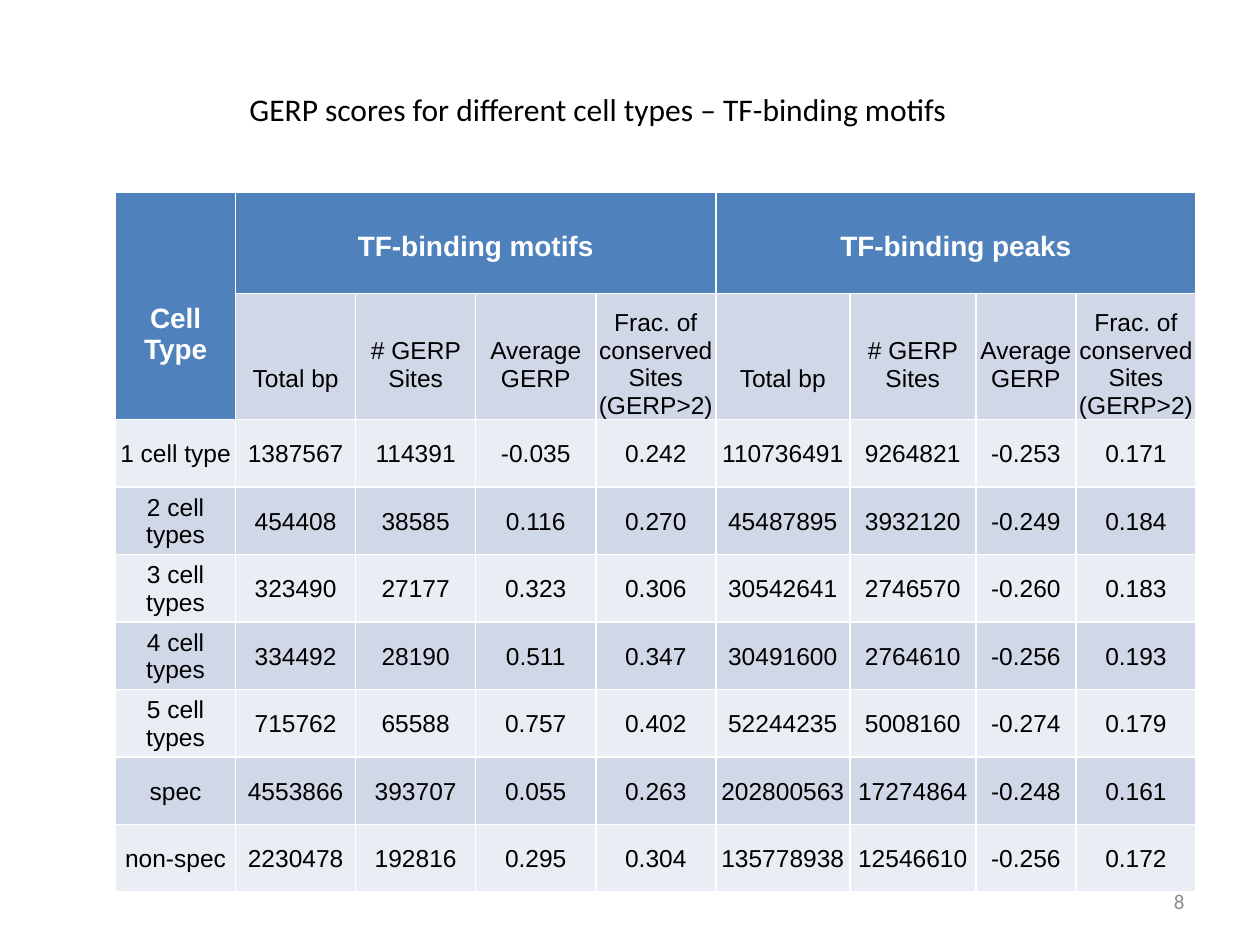
from lxml import etree
from pptx import Presentation
from pptx.dml.color import RGBColor
from pptx.enum.text import MSO_ANCHOR, PP_ALIGN
from pptx.oxml.ns import qn
from pptx.util import Cm, Pt

CENTER, LEFT, RIGHT = PP_ALIGN.CENTER, PP_ALIGN.LEFT, PP_ALIGN.RIGHT
MIDDLE, BOTTOM, TOP = MSO_ANCHOR.MIDDLE, MSO_ANCHOR.BOTTOM, MSO_ANCHOR.TOP

HEADER_FILL, DARK_BAND, LIGHT_BAND = "4F81BD", "D0D8E8", "E9EDF4"
WHITE, BLACK, GREY = "FFFFFF", "000000", "8C8C8C"

COLUMN_WIDTHS = [2.42] * 5 + [2.7, 2.54, 2.02, 2.42]
ROW_HEIGHTS = [2.04, 2.54] + [1.36] * 7
MEASURES = ["Total bp", "# GERP Sites", "Average GERP",
            "Frac. of conserved Sites (GERP>2)"]
# Row, column, rows spanned, columns spanned, text, space below the text
HEADERS = [
    (0, 0, 2, 1, "Cell Type", 1.1),
    (0, 1, 1, 4, "TF-binding motifs", 0.63),
    (0, 5, 1, 4, "TF-binding peaks", 0.63),
]
SCORES = [
    ["1 cell type", "1387567", "114391", "-0.035", "0.242",
     "110736491", "9264821", "-0.253", "0.171"],
    ["2 cell types", "454408", "38585", "0.116", "0.270",
     "45487895", "3932120", "-0.249", "0.184"],
    ["3 cell types", "323490", "27177", "0.323", "0.306",
     "30542641", "2746570", "-0.260", "0.183"],
    ["4 cell types", "334492", "28190", "0.511", "0.347",
     "30491600", "2764610", "-0.256", "0.193"],
    ["5 cell types", "715762", "65588", "0.757", "0.402",
     "52244235", "5008160", "-0.274", "0.179"],
    ["spec", "4553866", "393707", "0.055", "0.263",
     "202800563", "17274864", "-0.248", "0.161"],
    ["non-spec", "2230478", "192816", "0.295", "0.304",
     "135778938", "12546610", "-0.256", "0.172"],
]


def color(value):
    return RGBColor.from_string(value)


def write(frame, text, font_name, size, text_color, align, bold=False):
    para = frame.paragraphs[0]
    para.add_run().text = text
    para.alignment = align
    para.font.name = font_name
    para.font.size = Pt(size)
    para.font.bold = bold
    para.font.color.rgb = color(text_color)


def add_text(page, bounds, text, size, text_color, align, anchor, wrap):
    box = page.shapes.add_textbox(*(Cm(length) for length in bounds))
    box.text_frame.word_wrap = wrap
    box.text_frame.vertical_anchor = anchor
    write(box.text_frame, text, "Calibri", size, text_color, align)


def set_borders(cell):
    properties = cell._tc.get_or_add_tcPr()
    for side in "LRTB":
        line = etree.SubElement(properties, qn(f"a:ln{side}"), w=str(Pt(1)))
        fill = etree.SubElement(line, qn("a:solidFill"))
        etree.SubElement(fill, qn("a:srgbClr"), val=WHITE)


def paint_cell(cell, fill):
    set_borders(cell)
    cell.fill.solid()
    cell.fill.fore_color.rgb = color(fill)
    cell.margin_left = cell.margin_right = cell.margin_top = Cm(0.03)
    cell.margin_bottom = 0


def add_score_table(page):
    frame = page.shapes.add_table(
        len(ROW_HEIGHTS), len(COLUMN_WIDTHS), Cm(2.33), Cm(3.88),
        Cm(sum(COLUMN_WIDTHS)), Cm(sum(ROW_HEIGHTS)))
    table = frame.table
    for column, width in zip(table.columns, COLUMN_WIDTHS):
        column.width = Cm(width)
    for row, height in zip(table.rows, ROW_HEIGHTS):
        row.height = Cm(height)

    # Fills and borders
    for r in range(len(ROW_HEIGHTS)):
        for c in range(len(COLUMN_WIDTHS)):
            if r == 0 or (r == 1 and c == 0):
                fill = HEADER_FILL
            else:
                fill = DARK_BAND if r % 2 else LIGHT_BAND
            paint_cell(table.cell(r, c), fill)

    # Merged headings
    for r, c, row_span, column_span, text, gap in HEADERS:
        cell = table.cell(r, c)
        cell.merge(table.cell(r + row_span - 1, c + column_span - 1))
        cell.vertical_anchor = BOTTOM
        cell.margin_bottom = Cm(gap)
        write(cell.text_frame, text, "Arial", 16, WHITE, CENTER, True)

    # Measure names, the same under both headings
    for c, text in enumerate(MEASURES * 2, start=1):
        cell = table.cell(1, c)
        cell.vertical_anchor = BOTTOM
        if text != MEASURES[-1]:
            cell.margin_bottom = Cm(0.55)
        write(cell.text_frame, text, "Arial", 14, BLACK, CENTER)

    # Scores
    for r, values in enumerate(SCORES, start=2):
        for c, text in enumerate(values):
            cell = table.cell(r, c)
            cell.vertical_anchor = MIDDLE
            write(cell.text_frame, text, "Arial", 14, BLACK, CENTER)


def main():
    deck = Presentation()
    deck.slide_width, deck.slide_height = Cm(25.4), Cm(19.05)
    page = deck.slides.add_slide(deck.slide_layouts[6])
    add_score_table(page)
    # Page number, in front of the table
    add_text(page, (18.2, 17.66, 5.93, 1.01), "8", 12, GREY, RIGHT, MIDDLE, True)
    # Title
    add_text(page, (4.78, 1.7, 14.7, 1.03),
             "GERP scores for different cell types – TF-binding motifs",
             18, BLACK, LEFT, TOP, False)
    deck.save("out.pptx")


if __name__ == "__main__":
    main()
